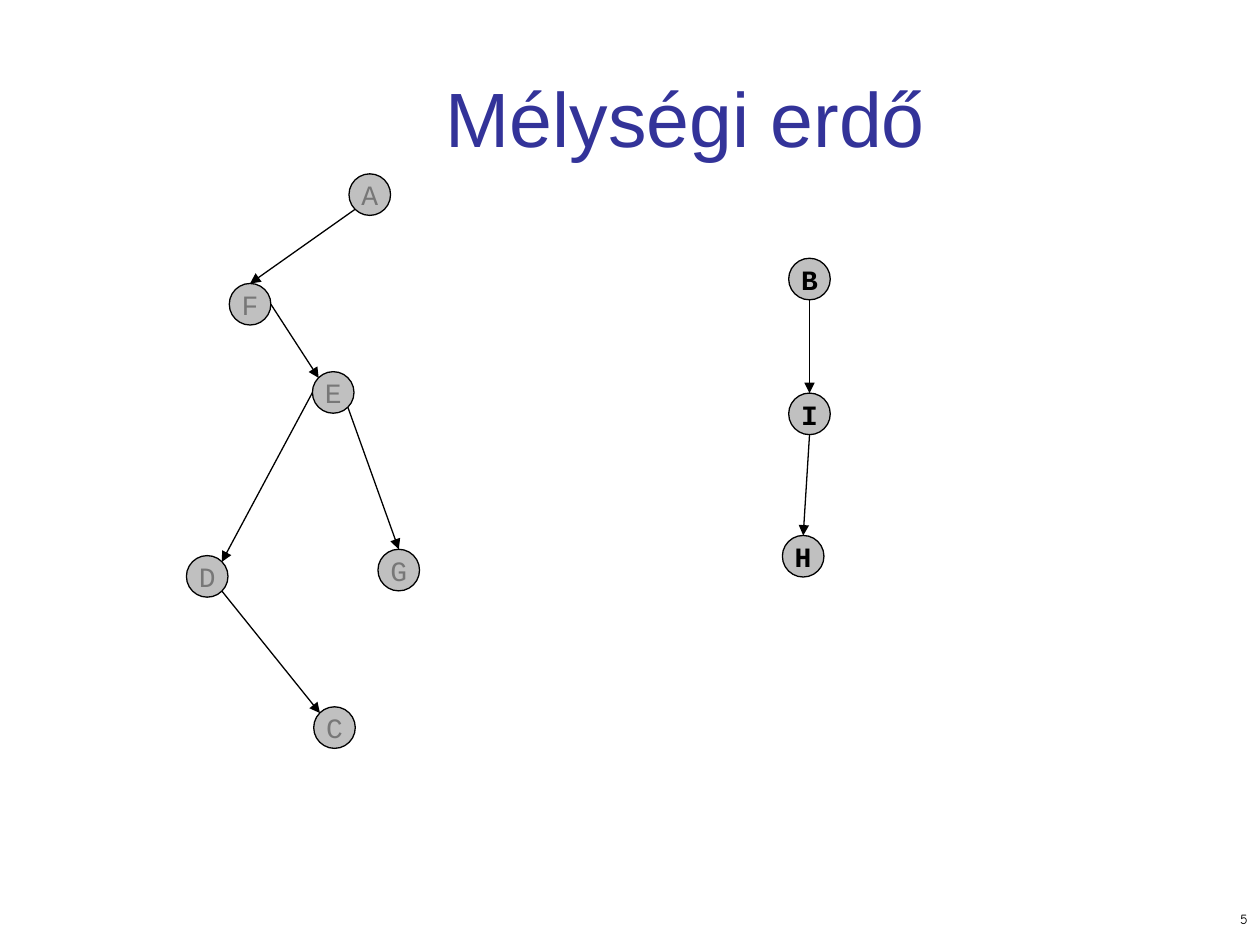
"""Build the slide that shows a depth-first forest of two trees."""
from lxml import etree
from pptx import Presentation
from pptx.dml.color import RGBColor
from pptx.enum.shapes import MSO_CONNECTOR, MSO_SHAPE
from pptx.enum.text import MSO_ANCHOR, PP_ALIGN
from pptx.oxml.ns import qn
from pptx.util import Inches, Pt

STRAIGHT = MSO_CONNECTOR.STRAIGHT
OVAL = MSO_SHAPE.OVAL
MIDDLE = MSO_ANCHOR.MIDDLE
CENTER, RIGHT = PP_ALIGN.CENTER, PP_ALIGN.RIGHT

TITLE = "Mélységi erdő"
PAGE_NUMBER = "5"
LEFT_TREE = {
    "A": (2.77, 1.38), "F": (1.82, 2.25), "E": (2.48, 2.95),
    "D": (1.48, 4.41), "G": (3.0, 4.36), "C": (2.49, 5.61),
}
RIGHT_TREE = {"B": (6.26, 2.05), "I": (6.26, 3.12), "H": (6.21, 4.25)}
EDGES = [
    ("A", "bottom left", "F", "top"),
    ("F", "right", "E", "top left"),
    ("E", "left", "D", "top right"),
    ("E", "bottom right", "G", "top"),
    ("D", "bottom right", "C", "top left"),
    ("B", "bottom", "I", "top"),
    ("I", "bottom", "H", "top"),
]

THEME = {
    "title": {"name": "Arial", "size": Pt(44), "color": "333399"},
    "page": {"name": "Comic Neue", "size": Pt(8), "color": "000000"},
    "left": {"name": "Courier New", "size": Pt(16), "bold": False, "color": "777777"},
    "right": {"name": "Courier New", "size": Pt(16), "bold": True, "color": "000000"},
    "node": "C0C0C0",
    "line": "000000",
    "line_width": Pt(0.75),
}
NODE_SIZE = 0.33
NEAR, FAR = 0.15, 0.85
SIDES = {
    "top": (0.5, 0), "bottom": (0.5, 1), "left": (0, 0.5), "right": (1, 0.5),
    "top left": (NEAR, NEAR), "top right": (FAR, NEAR),
    "bottom left": (NEAR, FAR), "bottom right": (FAR, FAR),
}


def write(shape, text, style, align, wrap):
    frame = shape.text_frame
    frame.word_wrap = wrap
    frame.vertical_anchor = MIDDLE
    paragraph = frame.paragraphs[0]
    paragraph.alignment = align
    run = paragraph.add_run()
    run.text = text
    for attribute, value in THEME[style].items():
        if attribute == "color":
            run.font.color.rgb = RGBColor.from_string(value)
        else:
            setattr(run.font, attribute, value)


def draw_outline(shape):
    shape.line.color.rgb = RGBColor.from_string(THEME["line"])
    shape.line.width = THEME["line_width"]


def add_node(slide, label, position, style):
    left, top = position
    node = slide.shapes.add_shape(
        OVAL, Inches(left), Inches(top), Inches(NODE_SIZE), Inches(NODE_SIZE))
    node.shadow.inherit = False
    node.fill.solid()
    node.fill.fore_color.rgb = RGBColor.from_string(THEME["node"])
    draw_outline(node)
    write(node, label, style, CENTER, False)


def rim_point(position, side):
    return [Inches(start + part * NODE_SIZE) for start, part in zip(position, SIDES[side])]


def add_edge(slide, start, end):
    edge = slide.shapes.add_connector(STRAIGHT, *start, *end)
    draw_outline(edge)
    etree.SubElement(edge.line._get_or_add_ln(), qn("a:tailEnd"), type="triangle")
    etree.SubElement(edge._element.spPr, qn("a:effectLst"))


def main():
    presentation = Presentation()
    presentation.slide_width, presentation.slide_height = Inches(10), Inches(7.5)
    slide = presentation.slides.add_slide(presentation.slide_layouts[5])

    title = slide.shapes.title
    title.left, title.top = Inches(1.38), Inches(0.3)
    title.width, title.height = Inches(8.12), Inches(1.25)
    write(title, TITLE, "title", CENTER, True)

    page = slide.shapes.add_textbox(Inches(7.92), Inches(7.17), Inches(2.08), Inches(0.25))
    write(page, PAGE_NUMBER, "page", RIGHT, True)

    for tree, style in ((LEFT_TREE, "left"), (RIGHT_TREE, "right")):
        for label, position in tree.items():
            add_node(slide, label, position, style)

    nodes = {**LEFT_TREE, **RIGHT_TREE}
    for parent, exit_side, child, entry_side in EDGES:
        add_edge(slide, rim_point(nodes[parent], exit_side), rim_point(nodes[child], entry_side))

    presentation.save("out.pptx")


if __name__ == "__main__":
    main()
